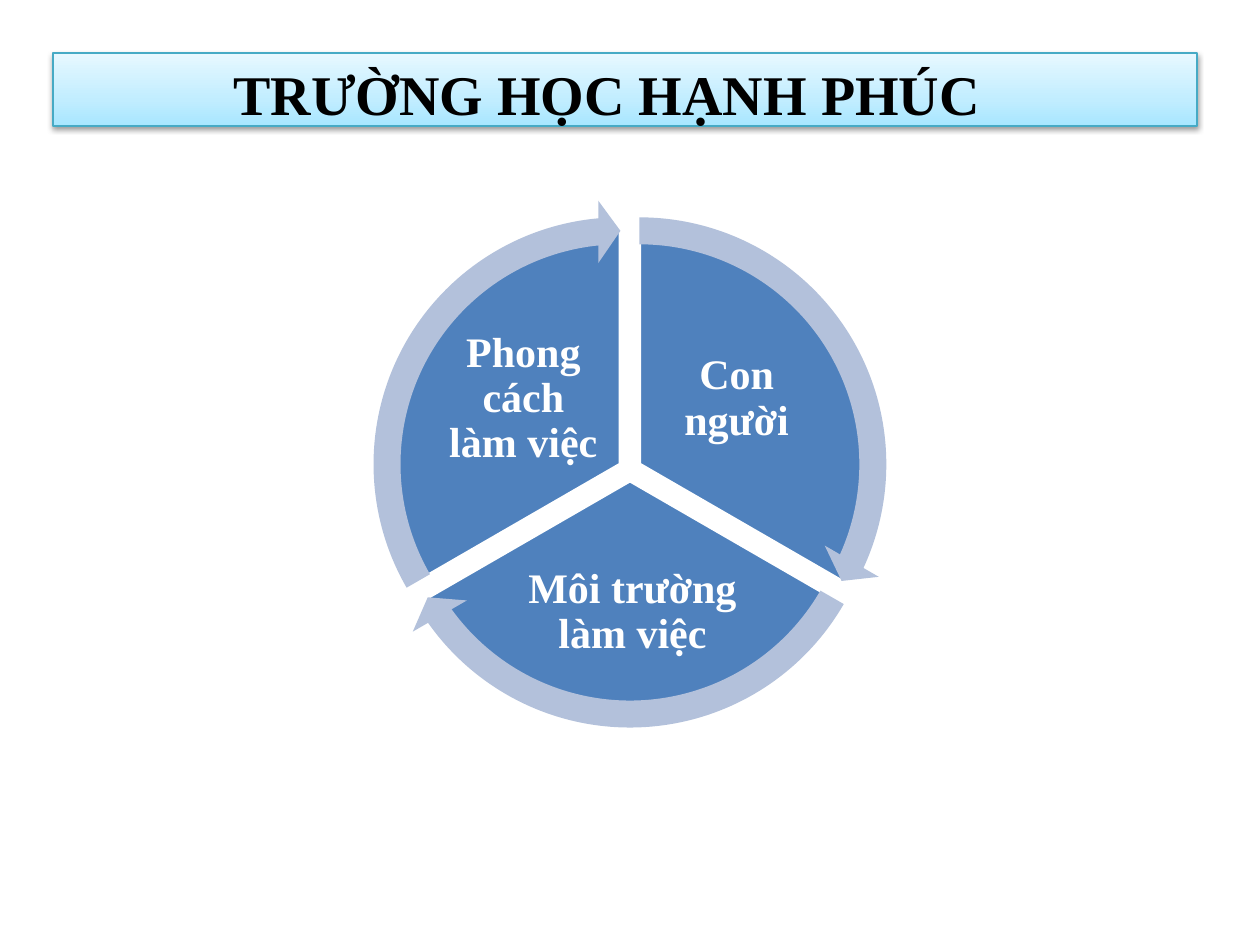
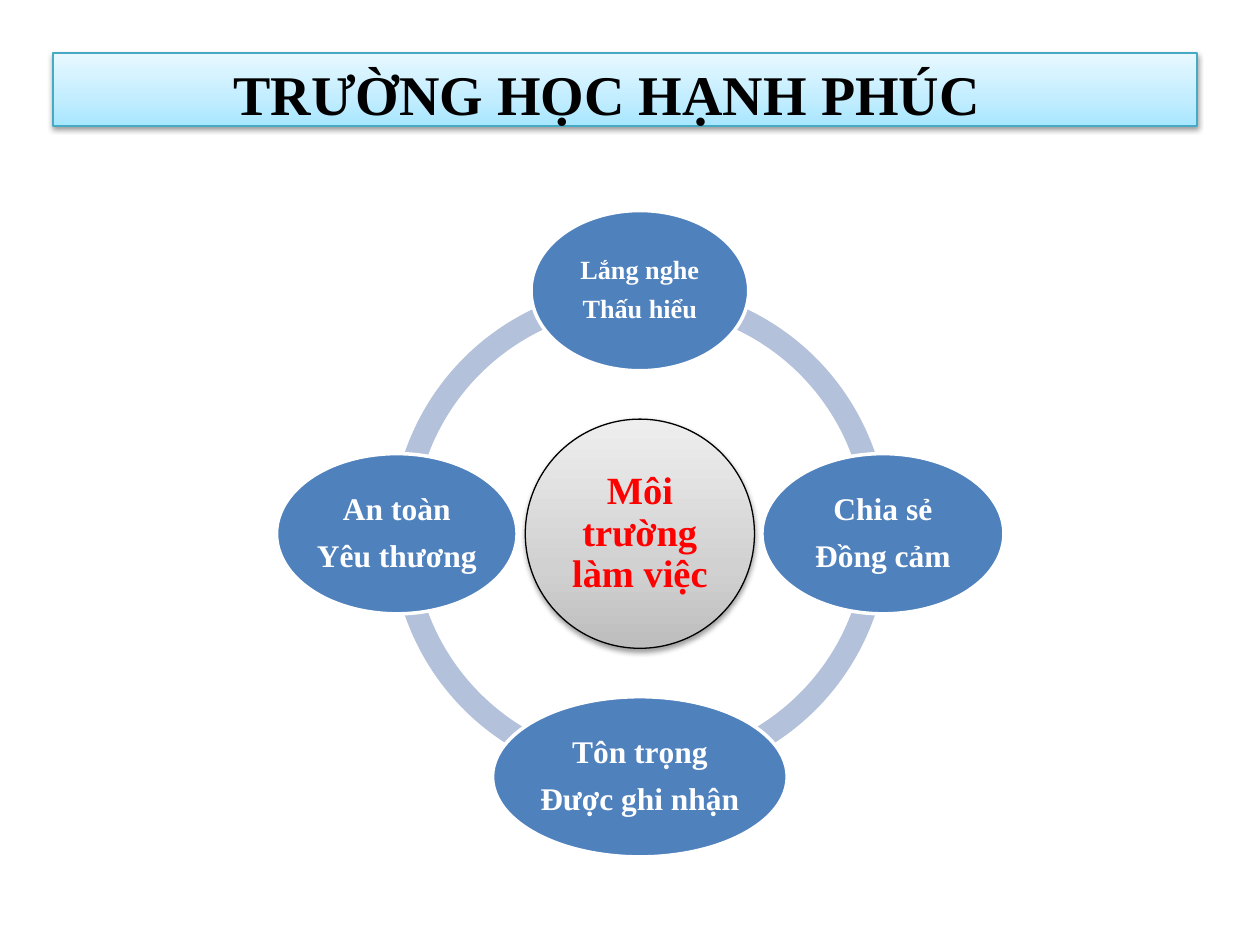
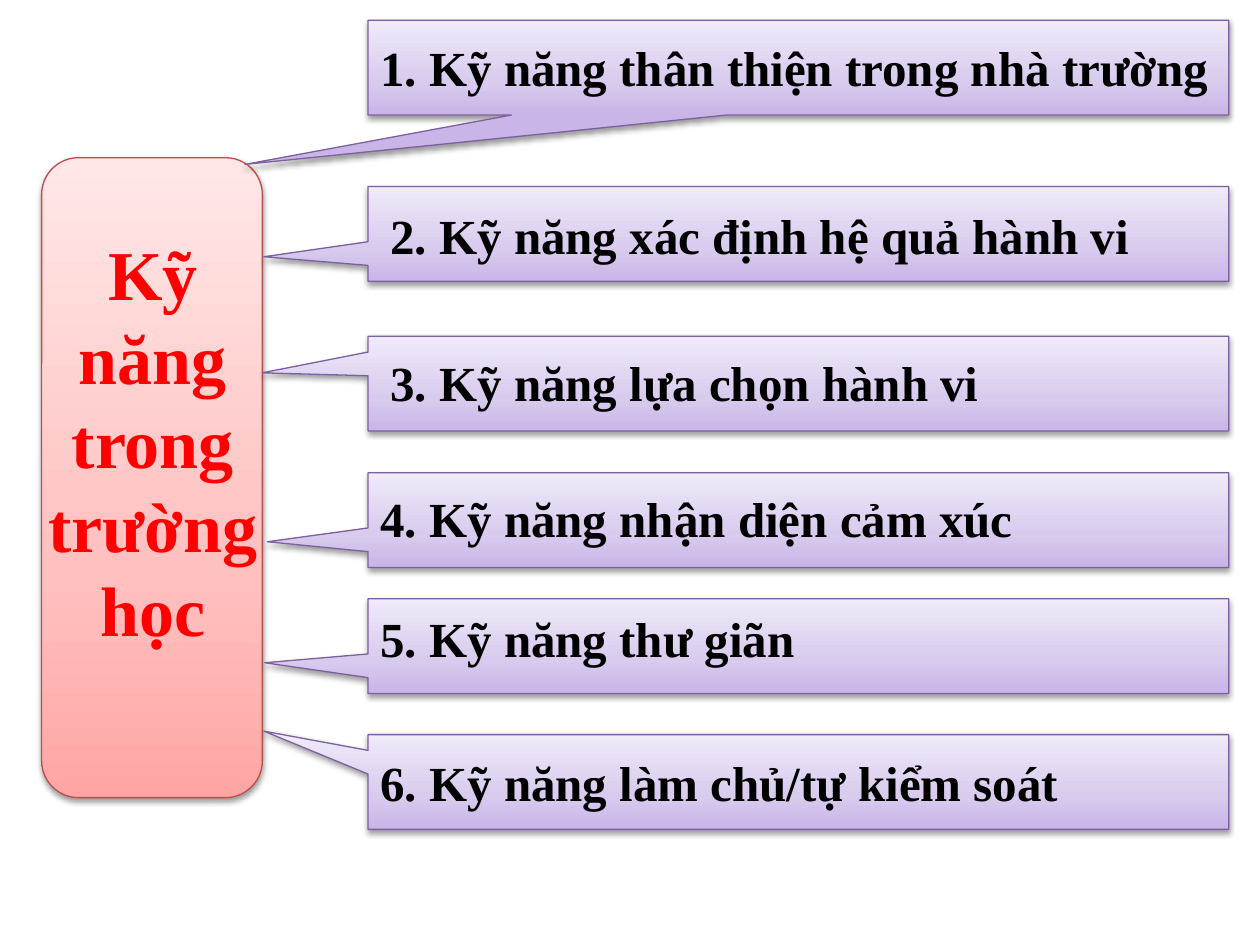
"""Builds three slides on the happy school: its parts, its environment and its skills."""
import copy
import dataclasses
import math

import lxml.etree
import pptx
import pptx.dml.color
import pptx.enum.shapes
import pptx.enum.text
import pptx.oxml.ns
import pptx.util

Cm = pptx.util.Cm
Pt = pptx.util.Pt
SHAPE = pptx.enum.shapes.MSO_SHAPE
ALIGN = pptx.enum.text.PP_ALIGN
ANCHOR = pptx.enum.text.MSO_ANCHOR
AUTO_SIZE = pptx.enum.text.MSO_AUTO_SIZE
qn = pptx.oxml.ns.qn


@dataclasses.dataclass(frozen=True)
class Gradient:
    bottom: str
    middle: str
    top: str
    line: str


@dataclasses.dataclass(frozen=True)
class Theme:
    font: str = "Times New Roman"
    black: str = "000000"
    white: str = "FFFFFF"
    red: str = "FF0000"
    blue: str = "4F81BD"
    pale_blue: str = "B3C1DB"
    aqua: Gradient = Gradient("A7E6FF", "C1EDFF", "E7F8FF", "46AAC5")
    gray: Gradient = Gradient("BDBDBD", "D1D1D1", "EEEEEE", "000000")
    rose: Gradient = Gradient("FFA6A5", "FFC0BF", "FFE7E7", "BF4C48")
    violet: Gradient = Gradient("C9B5E8", "D8CBEE", "F0EAF9", "7D60A0")
    title_size: int = 32
    panel_size: int = 40
    skill_size: int = 28
    sector_size: int = 24
    hub_size: int = 22
    node_size: int = 18
    small_node_size: int = 15
    thin_line: float = 0.75
    thick_line: float = 2


def rgb(color):
    return pptx.dml.color.RGBColor.from_string(color)


def around(x, y, width, height):
    return x - width / 2, y - height / 2, width, height


def polar(x, y, distance, degrees):
    angle = math.radians(degrees)
    return x + distance * math.cos(angle), y + distance * math.sin(angle)


class Deck:
    def __init__(self, theme):
        self.theme = theme
        self.presentation = pptx.Presentation()
        self.presentation.slide_width = Cm(25.4)
        self.presentation.slide_height = Cm(19.05)
        self.slide = None

    def add_slide(self):
        self.slide = self.presentation.slides.add_slide(self.presentation.slide_layouts[5])

    def add_text(self, shape, lines, size, color, align=ALIGN.LEFT):
        frame = shape.text_frame
        frame.word_wrap = True
        for index, line in enumerate(lines):
            paragraph = frame.paragraphs[0] if index == 0 else frame.add_paragraph()
            paragraph.alignment = align
            run = paragraph.add_run()
            run.text = line
            run.font.name = self.theme.font
            run.font.size = Pt(size)
            run.font.bold = True
            run.font.color.rgb = rgb(color)

    def add_centered_text(self, shape, lines, size, color):
        self.add_text(shape, lines, size, color, ALIGN.CENTER)
        frame = shape.text_frame
        frame.vertical_anchor = ANCHOR.MIDDLE
        frame.margin_left = frame.margin_right = Cm(0.08)
        frame.margin_top = frame.margin_bottom = Cm(0.08)
        for paragraph in frame.paragraphs:
            paragraph.line_spacing = 0.9
            paragraph.space_after = Pt(round(0.4 * size))

    def title(self, box, text, size, color, align=ALIGN.LEFT):
        shape = self.slide.shapes.title
        shape.left, shape.top, shape.width, shape.height = map(Cm, box)
        self.add_text(shape, [text], size, color, align)
        shape.text_frame.vertical_anchor = ANCHOR.TOP
        shape.text_frame.auto_size = AUTO_SIZE.SHAPE_TO_FIT_TEXT

    def text_box(self, box):
        return self.slide.shapes.add_textbox(*map(Cm, box))

    def shape(self, kind, box, adjustments=()):
        shape = self.slide.shapes.add_shape(kind, *map(Cm, box))
        shape.shadow.inherit = False
        for index, value in enumerate(adjustments):
            shape.adjustments[index] = value
        return shape

    def flat(self, kind, box, color, adjustments=(), outlined=False):
        shape = self.shape(kind, box, adjustments)
        shape.fill.solid()
        shape.fill.fore_color.rgb = rgb(color)
        if outlined:
            shape.line.color.rgb = rgb(self.theme.white)
            shape.line.width = Pt(self.theme.thick_line)
        else:
            shape.line.fill.background()
        return shape

    def raised(self, kind, box, gradient, adjustments=()):
        shape = self.shape(kind, box, adjustments)
        shape.fill.gradient()
        shape.fill.gradient_angle = 90
        properties = shape._element.spPr
        stop_list = properties.find(".//" + qn("a:gsLst"))
        stop_list.append(copy.deepcopy(stop_list[0]))
        colors = (gradient.bottom, gradient.middle, gradient.top)
        for stop, position, color in zip(shape.fill.gradient_stops, (0, 0.35, 1), colors):
            stop.position = position
            stop.color.rgb = rgb(color)
        shape.line.color.rgb = rgb(gradient.line)
        shape.line.width = Pt(self.theme.thin_line)
        shadow = lxml.etree.SubElement(
            properties.find(qn("a:effectLst")), qn("a:outerShdw"),
            blurRad="40000", dist="20000", dir="5400000", rotWithShape="0")
        shadow_color = lxml.etree.SubElement(shadow, qn("a:srgbClr"), val=self.theme.black)
        lxml.etree.SubElement(shadow_color, qn("a:alpha"), val="38000")
        return shape

    def send_to_back(self, shape):
        self.slide.shapes._spTree.insert(2, shape._element)

    def banner(self, text):
        self.send_to_back(self.raised(SHAPE.RECTANGLE, (1.07, 1.07, 23.06, 1.47), self.theme.aqua))
        self.title((4.45, 1.07, 18.21, 1.63), text, self.theme.title_size, self.theme.black)

    def sector(self, center, start, text, text_area):
        end = (start + 120) % 360
        box = around(*center, 9.48, 9.48)
        self.flat(SHAPE.PIE, box, self.theme.blue, (start * 0.6, end * 0.6), outlined=True)
        self.add_centered_text(self.text_box(text_area), [text], self.theme.sector_size, self.theme.white)

    def sector_arrow(self, center, start):
        head = 5.46
        tip = (start + 120) % 360 - head
        self.flat(SHAPE.CIRCULAR_ARROW, around(*center, 10.67, 10.67), self.theme.pale_blue,
                  (0.051, head * 0.6, tip * 0.6, start * 0.6, 0.059))

    def node(self, center, width, lines, size):
        ellipse = self.flat(SHAPE.OVAL, around(*center, width, 3.23), self.theme.blue, outlined=True)
        self.add_centered_text(ellipse, lines, size, self.theme.white)

    def skill(self, top, text_left, text_top, tail, text):
        self.raised(SHAPE.RECTANGULAR_CALLOUT, (7.42, top, 17.35, 1.91), self.theme.violet, tail)
        label = self.text_box((text_left, text_top, 17.35, 1.45))
        self.add_text(label, [text], self.theme.skill_size, self.theme.black)
        label.text_frame.auto_size = AUTO_SIZE.SHAPE_TO_FIT_TEXT


def build_parts(deck, heading):
    deck.add_slide()
    deck.banner(heading)
    sectors = [
        (270, "Con người", (13.16, 6.63, 3.38, 2.82)),
        (30, "Môi trường làm việc", (10.21, 11.1, 5.08, 2.49)),
        (150, "Phong cách làm việc", (8.86, 6.63, 3.38, 2.82)),
    ]
    centers = [polar(12.7, 9.47, 0.22, start + 60) for start, _, _ in sectors]
    for center, sector in zip(centers, sectors):
        deck.sector(center, *sector)
    for center, (start, _, _) in zip(centers, sectors):
        deck.sector_arrow(center, start)


def build_environment(deck, heading):
    theme = deck.theme
    middle = (12.9, 10.76)
    deck.add_slide()
    deck.banner(heading)
    for start in (180, 90, 0, 270):
        end = (start + 90) % 360
        deck.flat(SHAPE.BLOCK_ARC, around(*middle, 10.03, 10.03), theme.pale_blue,
                  (start * 0.6, end * 0.6, 0.046))
    hub = deck.raised(SHAPE.OVAL, around(*middle, 4.62, 4.62), theme.gray)
    deck.add_centered_text(hub, ["Môi trường làm việc"], theme.hub_size, theme.red)
    nodes = [
        (270, 4.39, ["Lắng nghe", "Thấu hiểu"], theme.small_node_size),
        (0, 4.88, ["Chia sẻ", "Đồng cảm"], theme.node_size),
        (90, 5.94, ["Tôn trọng", "Được ghi nhận"], theme.node_size),
        (180, 4.85, ["An toàn", "Yêu thương"], theme.node_size),
    ]
    for angle, width, lines, size in nodes:
        deck.node(polar(*middle, 4.9, angle), width, lines, size)


def build_skills(deck):
    theme = deck.theme
    deck.add_slide()
    deck.send_to_back(deck.raised(SHAPE.ROUNDED_RECTANGLE, (0.84, 3.18, 4.45, 12.9), theme.rose))
    deck.title((0.64, 4.52, 4.88, 8.81), "Kỹ năng trong trường học",
               theme.panel_size, theme.red, ALIGN.CENTER)
    skills = [
        (0.41, 7.42, 0.64, (-0.643, 1.021), "1. Kỹ năng thân thiện trong nhà trường"),
        (3.76, 7.62, 4.01, (-0.621, 0.242), "2. Kỹ năng xác định hệ quả hành vi"),
        (6.78, 7.62, 6.99, (-0.623, -0.114), "3. Kỹ năng lựa chọn hành vi"),
        (9.53, 7.42, 9.73, (-0.617, 0.229), "4. Kỹ năng nhận diện cảm xúc"),
        (12.07, 7.42, 12.14, (-0.62, 0.176), "5. Kỹ năng thư giãn"),
        (14.81, 7.42, 15.04, (-0.621, -0.537), "6. Kỹ năng làm chủ/tự kiểm soát"),
    ]
    for skill in skills:
        deck.skill(*skill)


def main():
    deck = Deck(Theme())
    heading = "TRƯỜNG HỌC HẠNH PHÚC"
    build_parts(deck, heading)
    build_environment(deck, heading)
    build_skills(deck)
    deck.presentation.save("out.pptx")


if __name__ == "__main__":
    main()
